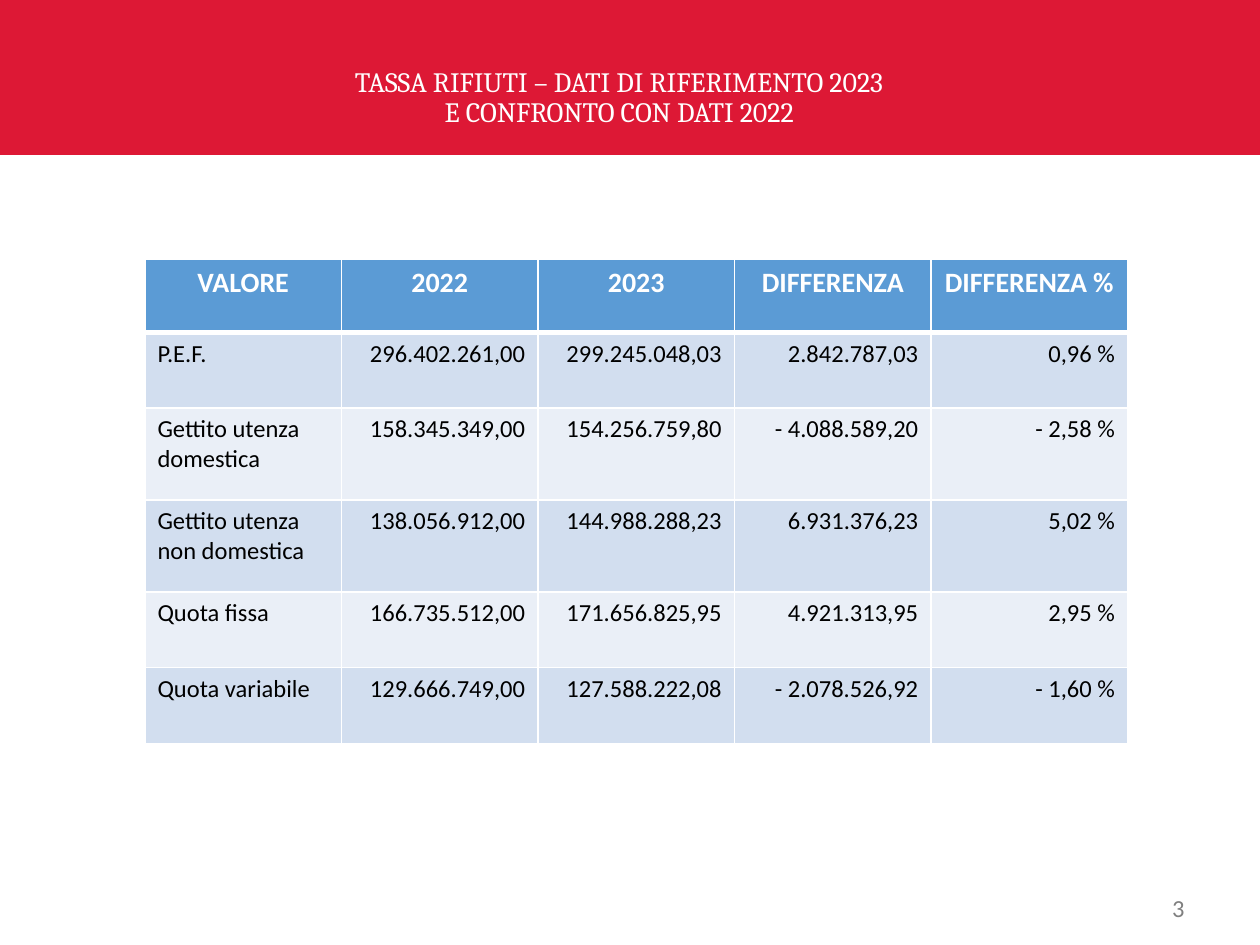
import pptx
import pptx.util
import pptx.dml.color
import pptx.enum.shapes
import pptx.enum.text
import pptx.oxml
import pptx.oxml.ns

Inches, Pt = pptx.util.Inches, pptx.util.Pt
RGBColor = pptx.dml.color.RGBColor
PP_ALIGN, MSO_ANCHOR = pptx.enum.text.PP_ALIGN, pptx.enum.text.MSO_ANCHOR

RED = RGBColor(0xDD, 0x18, 0x35)
WHITE = RGBColor(0xFF, 0xFF, 0xFF)
BLACK = RGBColor(0, 0, 0)
GRAY = RGBColor(0x80, 0x80, 0x80)
BLUE = RGBColor(0x5B, 0x9B, 0xD5)
BANDS = [RGBColor(0xEA, 0xEF, 0xF7), RGBColor(0xD2, 0xDE, 0xEF)]

HEAD = {"name": "Calibri", "size": Pt(16), "bold": True}
BODY = {"name": "Calibri", "size": Pt(14), "bold": False}

ROWS = [
    ["VALORE", "2022", "2023", "DIFFERENZA", "DIFFERENZA %"],
    ["P.E.F.", "296.402.261,00", "299.245.048,03", "2.842.787,03", "0,96 %"],
    ["Gettito utenza domestica", "158.345.349,00", "154.256.759,80", "- 4.088.589,20", "- 2,58 %"],
    ["Gettito utenza non domestica", "138.056.912,00", "144.988.288,23", "6.931.376,23", "5,02 %"],
    ["Quota fissa", "166.735.512,00", "171.656.825,95", "4.921.313,95", "2,95 %"],
    ["Quota variabile", "129.666.749,00", "127.588.222,08", "- 2.078.526,92", "- 1,60 %"],
]
HEIGHTS = [0.58, 0.6, 0.73, 0.73, 0.6, 0.6]


def write(frame, text, align, color, look):
    frame.text = text
    for para in frame.paragraphs:
        para.alignment = align
        for key, value in look.items():
            setattr(para.font, key, value)
        para.font.color.rgb = color


def edge(cell, side, width):
    """Add a white border; sides must come in the order L, R, T, B, before the fill."""
    line = pptx.oxml.parse_xml(
        f'<a:ln{side} {pptx.oxml.ns.nsdecls("a")} w="{Pt(width)}">'
        f'<a:solidFill><a:srgbClr val="{WHITE}"/></a:solidFill></a:ln{side}>')
    cell._tc.get_or_add_tcPr().append(line)


deck = pptx.Presentation()
deck.slide_width, deck.slide_height = Inches(10), Inches(7.5)
slide = deck.slides.add_slide(deck.slide_layouts[5])
shapes = slide.shapes

# Title on its red band
title = shapes.title
title.left, title.top = Inches(1.61), Inches(0.39)
title.width, title.height = Inches(6.61), Inches(0.68)
band = shapes.add_shape(pptx.enum.shapes.MSO_SHAPE.RECTANGLE, 0, 0, Inches(10), Inches(1.23))
band.shadow.inherit = False
band.fill.solid()
band.fill.fore_color.rgb = RED
band.line.fill.background()
title.element.addprevious(band.element)
frame = title.text_frame
write(frame, "TASSA RIFIUTI – DATI DI RIFERIMENTO 2023\vE CONFRONTO CON DATI 2022",
      PP_ALIGN.CENTER, WHITE, {"name": "Cambria", "size": Pt(16)})
frame.paragraphs[0].line_spacing = 0.9
frame.vertical_anchor = MSO_ANCHOR.BOTTOM
frame.auto_size = pptx.enum.text.MSO_AUTO_SIZE.NONE

# Comparison table
grid = shapes.add_table(len(ROWS), len(ROWS[0]), Inches(1.15), Inches(2.06),
                        Inches(7.8), Inches(sum(HEIGHTS))).table
for col in grid.columns:
    col.width = Inches(1.56)
for r, (row, height) in enumerate(zip(ROWS, HEIGHTS)):
    grid.rows[r].height = Inches(height)
    for c, text in enumerate(row):
        cell = grid.cell(r, c)
        if r == 0:
            write(cell.text_frame, text, PP_ALIGN.CENTER, WHITE, HEAD)
        else:
            align = PP_ALIGN.RIGHT if c else PP_ALIGN.LEFT
            write(cell.text_frame, text, align, BLACK, BODY)
        for side in "LRTB":
            thick = (r == 0 and side == "B") or (r == 1 and side == "T")
            edge(cell, side, 3 if thick else 1)
        cell.fill.solid()
        cell.fill.fore_color.rgb = BANDS[r % 2] if r else BLUE

# Page number
page = shapes.add_textbox(Inches(7.17), Inches(7.06), Inches(2.33), Inches(0.29))
page.text_frame.word_wrap = True
page.text_frame.vertical_anchor = MSO_ANCHOR.MIDDLE
write(page.text_frame, "3", PP_ALIGN.RIGHT, GRAY, BODY)

deck.save("out.pptx")
